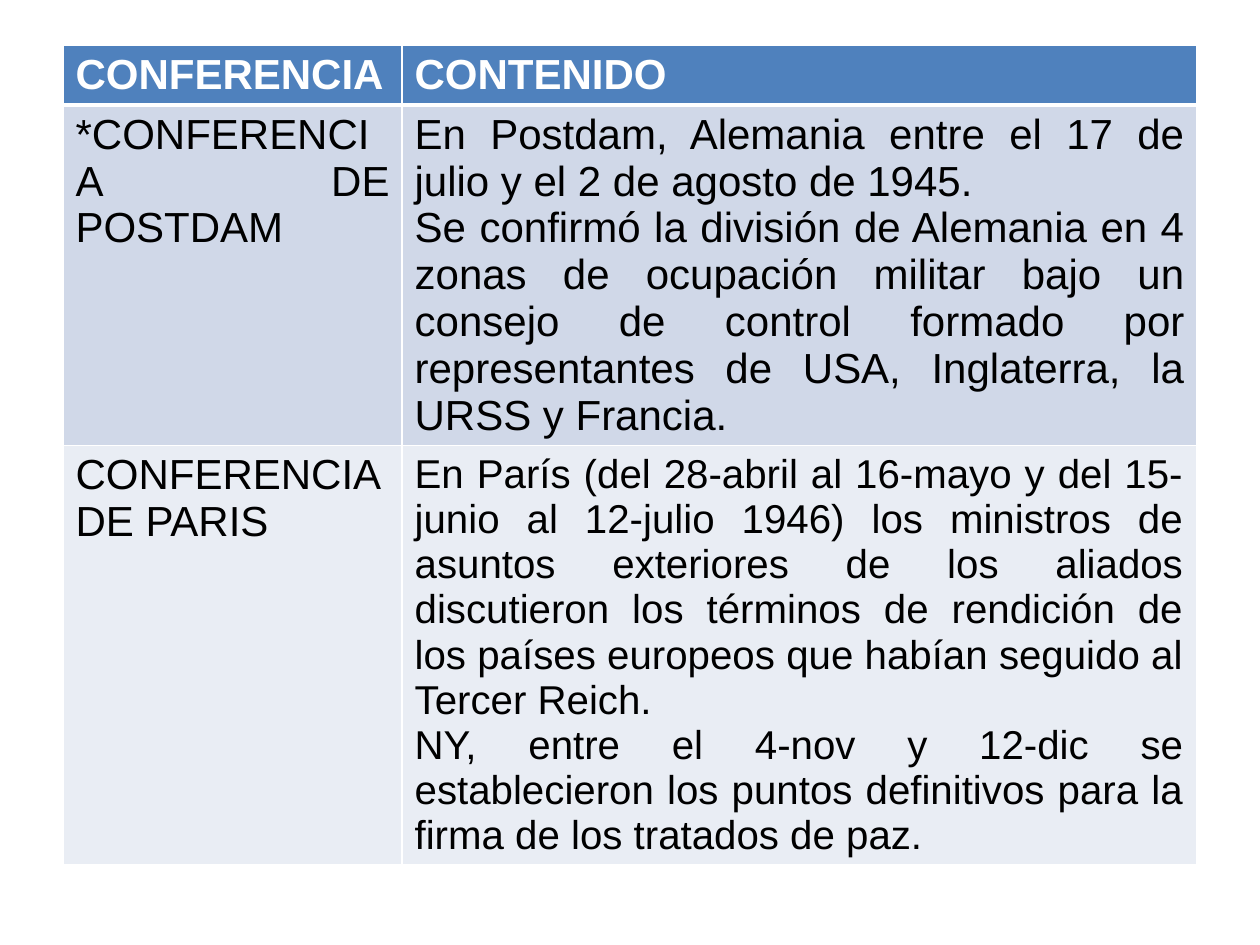
import pptx
import pptx.dml.color
import pptx.enum.text
import pptx.oxml.ns
import pptx.util
from lxml import etree

Pt = pptx.util.Pt
RGB = pptx.dml.color.RGBColor.from_string
JUSTIFY = pptx.enum.text.PP_ALIGN.JUSTIFY

COLORS = {
    "header": "4F81BD",
    "postdam": "D0D8E8",
    "paris": "E9EDF4",
    "border": "FFFFFF",
    "header_text": "FFFFFF",
    "body_text": "000000",
}

HEADER_FONT = {"name": "Arial", "size": Pt(24), "bold": True}
BODY_FONT = {"name": "Arial", "size": Pt(24), "bold": False}
DETAIL_FONT = {**BODY_FONT, "size": Pt(23)}

# Each row: fill, text colour, bottom border, then (font, paragraphs) per cell
CONFERENCES = [
    ("header", "header_text", 3, [
        (HEADER_FONT, ["CONFERENCIA"]),
        (HEADER_FONT, ["CONTENIDO"]),
    ]),
    ("postdam", "body_text", 1, [
        (BODY_FONT, ["*CONFERENCIA DE POSTDAM"]),
        (BODY_FONT, [
            "En Postdam, Alemania entre el 17 de julio y el 2 de agosto de 1945.",
            "Se confirmó la división de Alemania en 4 zonas de ocupación militar "
            "bajo un consejo de control formado por representantes de USA, "
            "Inglaterra, la URSS y Francia.",
        ]),
    ]),
    ("paris", "body_text", 1, [
        (BODY_FONT, ["CONFERENCIA DE PARIS"]),
        (DETAIL_FONT, [
            "En París (del 28-abril al 16-mayo y del 15-junio al 12-julio 1946) "
            "los ministros de asuntos exteriores de los aliados discutieron los "
            "términos de rendición de los países europeos que habían seguido al "
            "Tercer Reich.",
            "NY, entre el 4-nov y 12-dic se establecieron los puntos definitivos "
            "para la firma de los tratados de paz.",
        ]),
    ]),
]


def set_borders(cell, widths):
    """Draw the cell's borders; they must come before its fill in the XML."""
    qn = pptx.oxml.ns.qn
    properties = cell._tc.get_or_add_tcPr()
    for position, (side, width) in enumerate(widths.items()):
        line = etree.Element(qn(f"a:ln{side}"), w=str(Pt(width)))
        fill = etree.SubElement(line, qn("a:solidFill"))
        etree.SubElement(fill, qn("a:srgbClr"), val=COLORS["border"])
        properties.insert(position, line)


def write_cell(cell, paragraphs, font, color):
    frame = cell.text_frame
    frame.text = "\n".join(paragraphs)
    for paragraph in frame.paragraphs:
        paragraph.alignment = JUSTIFY
        for run in paragraph.runs:
            for attribute, value in font.items():
                setattr(run.font, attribute, value)
            run.font.color.rgb = RGB(COLORS[color])


def add_conference_table(slide, left, top, width, height):
    frame = slide.shapes.add_table(
        len(CONFERENCES), 2, Pt(left), Pt(top), Pt(width), Pt(height))
    table = frame.table

    # Column shares; the rows start at one line and grow with their text
    for column, share in zip(table.columns, (0.299, 0.701)):
        column.width = Pt(width * share)
    for row in table.rows:
        row.height = Pt(29.5)
    frame.height = Pt(height)

    top_border = 1
    for row, (fill, color, bottom_border, contents) in zip(table.rows, CONFERENCES):
        for cell, (font, paragraphs) in zip(row.cells, contents):
            cell.fill.solid()
            cell.fill.fore_color.rgb = RGB(COLORS[fill])
            set_borders(cell, {"L": 1, "R": 1, "T": top_border, "B": bottom_border})
            write_cell(cell, paragraphs, font, color)
        top_border = bottom_border


def main():
    presentation = pptx.Presentation()
    presentation.slide_width = Pt(720)
    presentation.slide_height = Pt(540)
    slide = presentation.slides.add_slide(presentation.slide_layouts[6])
    add_conference_table(slide, 36, 26, 648, 444)
    presentation.save("out.pptx")


if __name__ == "__main__":
    main()
